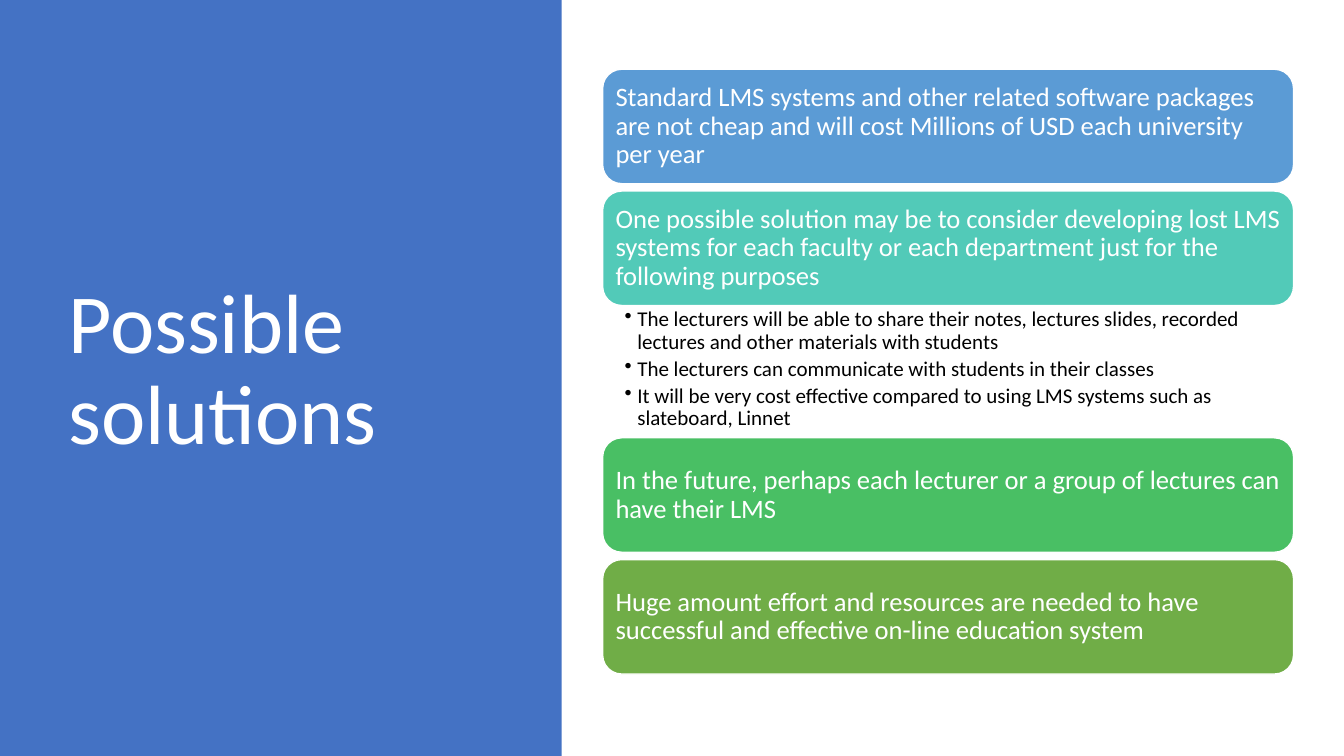
"""Build the "Possible solutions" slide: a title panel beside a column of cards."""
from lxml.etree import SubElement
from pptx import Presentation
from pptx.dml.color import RGBColor
from pptx.enum.shapes import MSO_SHAPE
from pptx.enum.text import MSO_ANCHOR, MSO_AUTO_SIZE, PP_ALIGN
from pptx.oxml.ns import qn
from pptx.util import Pt

PX = 9525
COLORS = {
    "panel": "4472C4",
    "blue": "5B9BD5",
    "teal": "52CAB8",
    "green": "49BF64",
    "olive": "70AD47",
    "white": "FFFFFF",
    "black": "000000",
}
CARD_LEFT, CARD_WIDTH, CARD_HEIGHT = 574, 658, 109
CARD_GAP, BULLETS_HEIGHT, INDENT = 7, 126, 12

cards = [
    ("blue", "Standard LMS systems and other related software packages are not cheap "
             "and will cost Millions of USD each university per year", []),
    ("teal", "One possible solution may be to consider developing lost LMS systems for "
             "each faculty or each department just for the following purposes", [
        "The lecturers will be able to share their notes, lectures slides, recorded "
        "lectures and other materials with students",
        "The lecturers can communicate with students in their classes",
        "It will be very cost effective compared to using LMS systems such as "
        "slateboard, Linnet",
    ]),
    ("green", "In the future, perhaps each lecturer or a group of lectures can have "
              "their LMS", []),
    ("olive", "Huge amount effort and resources are needed to have successful and "
              "effective on-line education system", []),
]


def write(shape, texts, size, color, anchor, margins, bullet=False):
    frame = shape.text_frame
    left, top, right, bottom = [margin * PX for margin in margins]
    frame_format = {
        "word_wrap": True, "auto_size": MSO_AUTO_SIZE.NONE, "vertical_anchor": anchor,
        "margin_left": left, "margin_top": top,
        "margin_right": right, "margin_bottom": bottom,
    }
    for name, value in frame_format.items():
        setattr(frame, name, value)
    for index, text in enumerate(texts):
        paragraph = frame.add_paragraph() if index else frame.paragraphs[0]
        paragraph.alignment = PP_ALIGN.LEFT
        paragraph.line_spacing = 0.9
        if bullet:
            paragraph.level = 1
            paragraph.space_after = Pt(3)
            properties = paragraph._p.get_or_add_pPr()
            properties.set("marL", str(INDENT * PX))
            properties.set("indent", str(-INDENT * PX))
            SubElement(properties, qn("a:buChar")).set("char", "•")
        run = paragraph.add_run()
        run.text = text
        for name, value in {"name": "Calibri", "size": Pt(size)}.items():
            setattr(run.font, name, value)
        run.font.color.rgb = RGBColor.from_string(COLORS[color])


def add_block(kind, left, top, width, height, color):
    shape = slide.shapes.add_shape(kind, left * PX, top * PX, width * PX, height * PX)
    shape.shadow.inherit = False
    shape.fill.solid()
    shape.fill.fore_color.rgb = RGBColor.from_string(COLORS[color])
    return shape


presentation = Presentation()
presentation.slide_width = 1280 * PX
presentation.slide_height = 720 * PX
slide = presentation.slides.add_slide(presentation.slide_layouts[5])

panel = add_block(MSO_SHAPE.RECTANGLE, 0, 0, 535, 720, "panel")
panel.line.fill.background()
title = slide.shapes.title
title._element.addprevious(panel._element)
for name, value in {"left": 55, "top": 65, "width": 399, "height": 578}.items():
    setattr(title, name, value * PX)
write(title, ["Possible solutions"], 60, "white", MSO_ANCHOR.MIDDLE, (10, 5, 10, 5))

top = 66
for color, text, bullets in cards:
    card = add_block(MSO_SHAPE.ROUNDED_RECTANGLE, CARD_LEFT, top, CARD_WIDTH, CARD_HEIGHT, color)
    card.line.color.rgb = RGBColor.from_string(COLORS["white"])
    card.line.width = Pt(1)
    write(card, [text], 19, "white", MSO_ANCHOR.MIDDLE, (7, 7, 7, 7))
    top += CARD_HEIGHT
    if bullets:
        purposes = slide.shapes.add_textbox(
            CARD_LEFT * PX, top * PX, CARD_WIDTH * PX, BULLETS_HEIGHT * PX)
        write(purposes, bullets, 15, "black", MSO_ANCHOR.TOP, (21, 3, 14, 3), bullet=True)
        top += BULLETS_HEIGHT
    else:
        top += CARD_GAP

presentation.save("out.pptx")
